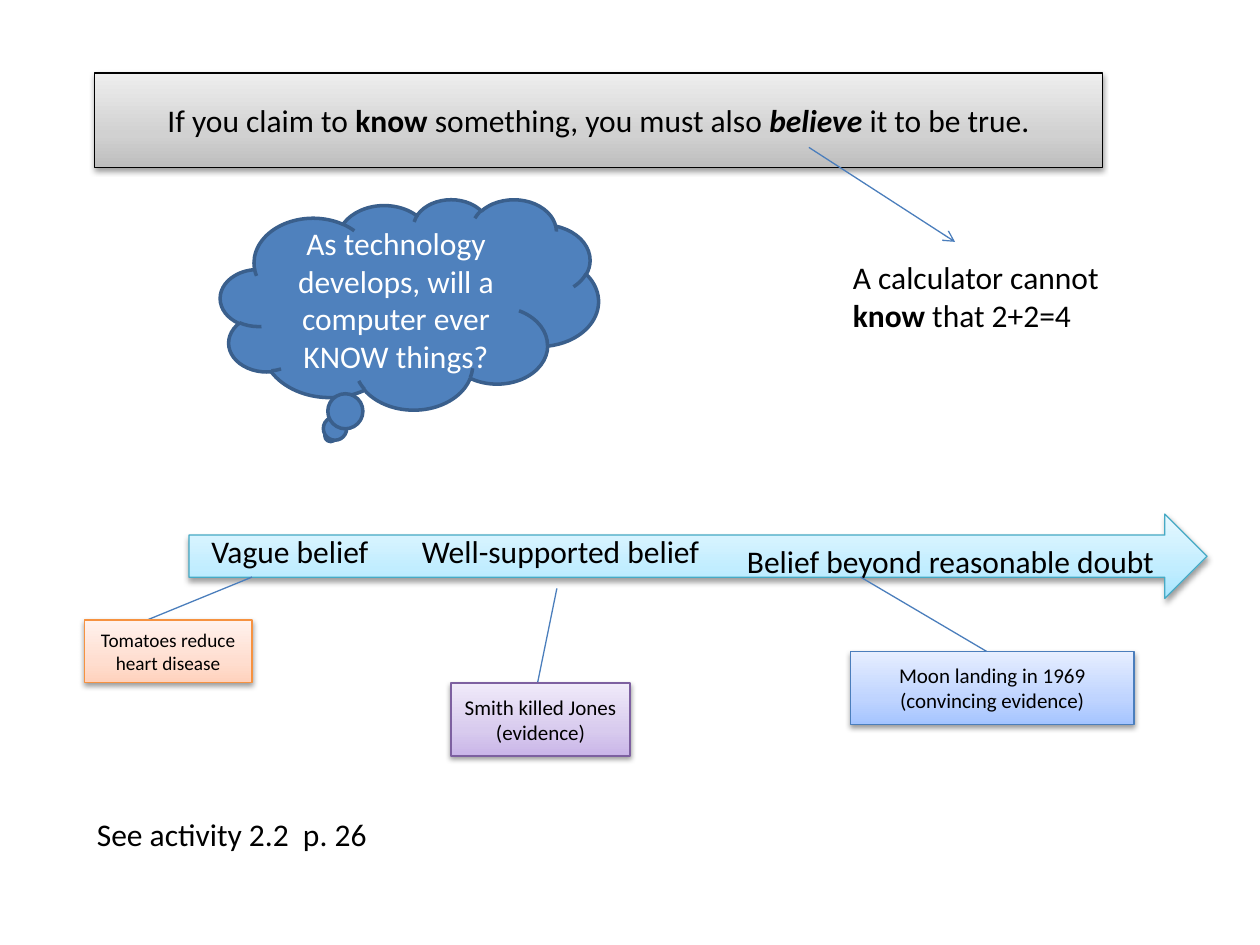
from copy import deepcopy

from lxml import etree
from pptx import Presentation
from pptx.dml.color import RGBColor
from pptx.enum import shapes, text
from pptx.oxml.ns import qn
from pptx.util import Inches, Pt

BLACK, BLUE = "000000", "4B7EBC"
SHAPE = shapes.MSO_SHAPE


def rgb(value):
    return RGBColor.from_string(value)


def write(sp, content, size=18, color=BLACK, align=text.PP_ALIGN.LEFT,
          anchor=text.MSO_ANCHOR.TOP):
    tf = sp.text_frame
    tf.word_wrap = True
    tf.vertical_anchor = anchor
    p = tf.paragraphs[0]
    p.alignment = align
    runs = [(content, "")] if isinstance(content, str) else content
    for words, style in runs:
        r = p.add_run()
        r.text = words
        r.font.name = "Calibri"
        r.font.size = Pt(size)
        r.font.color.rgb = rgb(color)
        r.font.bold = "b" in style
        r.font.italic = "i" in style


def add_label(slide, box, content):
    sp = slide.shapes.add_textbox(*map(Inches, box))
    write(sp, content)
    sp.text_frame.auto_size = text.MSO_AUTO_SIZE.SHAPE_TO_FIT_TEXT


def add_shape(slide, kind, box, line, width=0.75):
    sp = slide.shapes.add_shape(kind, *map(Inches, box))
    sp.shadow.inherit = False
    sp.line.color.rgb = rgb(line)
    sp.line.width = Pt(width)
    return sp


def fill_gradient(sp, colors):
    sp.fill.gradient()
    sp.fill.gradient_angle = 90
    first = sp._element.spPr.find(".//" + qn("a:gs"))
    first.addnext(deepcopy(first))
    for stop, position, color in zip(sp.fill.gradient_stops, (0, 0.35, 1), colors):
        stop.position = position
        stop.color.rgb = rgb(color)


def add_shadow(sp):
    effects = sp._element.spPr.find(qn("a:effectLst"))
    shadow = etree.SubElement(effects, qn("a:outerShdw"), blurRad="40000",
                              dist="20000", dir="5400000", rotWithShape="0")
    color = etree.SubElement(shadow, qn("a:srgbClr"), val=BLACK)
    etree.SubElement(color, qn("a:alpha"), val="38000")


def add_panel(slide, kind, box, line, colors, content=None, size=18):
    sp = add_shape(slide, kind, box, line)
    fill_gradient(sp, colors)
    add_shadow(sp)
    if content:
        write(sp, content, size=size, align=text.PP_ALIGN.CENTER,
              anchor=text.MSO_ANCHOR.MIDDLE)


def add_line(slide, start, end, arrow=False):
    cx = slide.shapes.add_connector(shapes.MSO_CONNECTOR.STRAIGHT,
                                    *map(Inches, start + end))
    cx.line.color.rgb = rgb(BLUE)
    cx.line.width = Pt(0.75)
    if arrow:
        etree.SubElement(cx.line._get_or_add_ln(), qn("a:tailEnd"), type="arrow")
    etree.SubElement(cx._element.spPr, qn("a:effectLst"))


def add_thought(slide, box, content):
    sp = add_shape(slide, SHAPE.CLOUD_CALLOUT, box, "3A5F8C", width=2)
    sp.fill.solid()
    sp.fill.fore_color.rgb = rgb("4F81BD")
    write(sp, content, color="FFFFFF", align=text.PP_ALIGN.CENTER,
          anchor=text.MSO_ANCHOR.MIDDLE)


def main():
    prs = Presentation()
    prs.slide_width, prs.slide_height = Inches(10), Inches(7.5)
    slide = prs.slides.add_slide(prs.slide_layouts[6])

    claim = [("If you claim to ", ""), ("know", "b"),
             (" something, you must also ", ""), ("believe", "bi"),
             (" it to be true.", "")]
    add_panel(slide, SHAPE.RECTANGLE, (0.75, 0.58, 8, 0.75), BLACK,
              ("BDBDBD", "D1D1D1", "EEEEEE"), claim)
    add_thought(slide, (1.75, 1.58, 3, 1.67),
                "As technology develops, will a computer ever KNOW things?")
    add_line(slide, (6.42, 1.17), (7.58, 1.92), arrow=True)
    add_label(slide, (6.67, 2, 2.33, 0.71),
              [("A calculator cannot ", ""), ("know", "b"), (" that 2+2=4", "")])

    add_panel(slide, SHAPE.RIGHT_ARROW, (1.5, 4.08, 8.08, 0.67), "46AAC5",
              ("A7E6FF", "C1EDFF", "E7F8FF"))
    add_label(slide, (1.58, 4.17, 2.67, 0.4), "Vague belief")
    add_label(slide, (3.25, 4.17, 2.67, 0.4), "Well-supported belief")
    add_label(slide, (5.83, 4.25, 3.58, 0.4), "Belief beyond reasonable doubt")

    examples = [
        ((2, 4.58), (1.17, 4.92), (0.67, 4.92, 1.33, 0.5), "F69240",
         ("FFD2BD", "FFDED0", "FFF2ED"), "Tomatoes reduce heart disease", 11),
        ((4.42, 4.67), (4.25, 5.5), (3.58, 5.42, 1.42, 0.58), "7D60A0",
         ("C9B5E8", "D8CBEE", "F0EAF9"), "Smith killed Jones (evidence)", 12),
        ((6.83, 4.58), (7.83, 5.17), (6.75, 5.17, 2.25, 0.58), BLUE,
         ("A4C4FF", "BFD4FF", "E6EEFF"),
         "Moon landing in 1969 (convincing evidence)", 12),
    ]
    for start, end, box, line, colors, content, size in examples:
        add_line(slide, start, end)
        add_panel(slide, SHAPE.RECTANGLE, box, line, colors, content, size)

    add_label(slide, (0.67, 6.42, 3.08, 0.4), "See activity 2.2  p. 26")
    prs.save("out.pptx")


if __name__ == "__main__":
    main()
